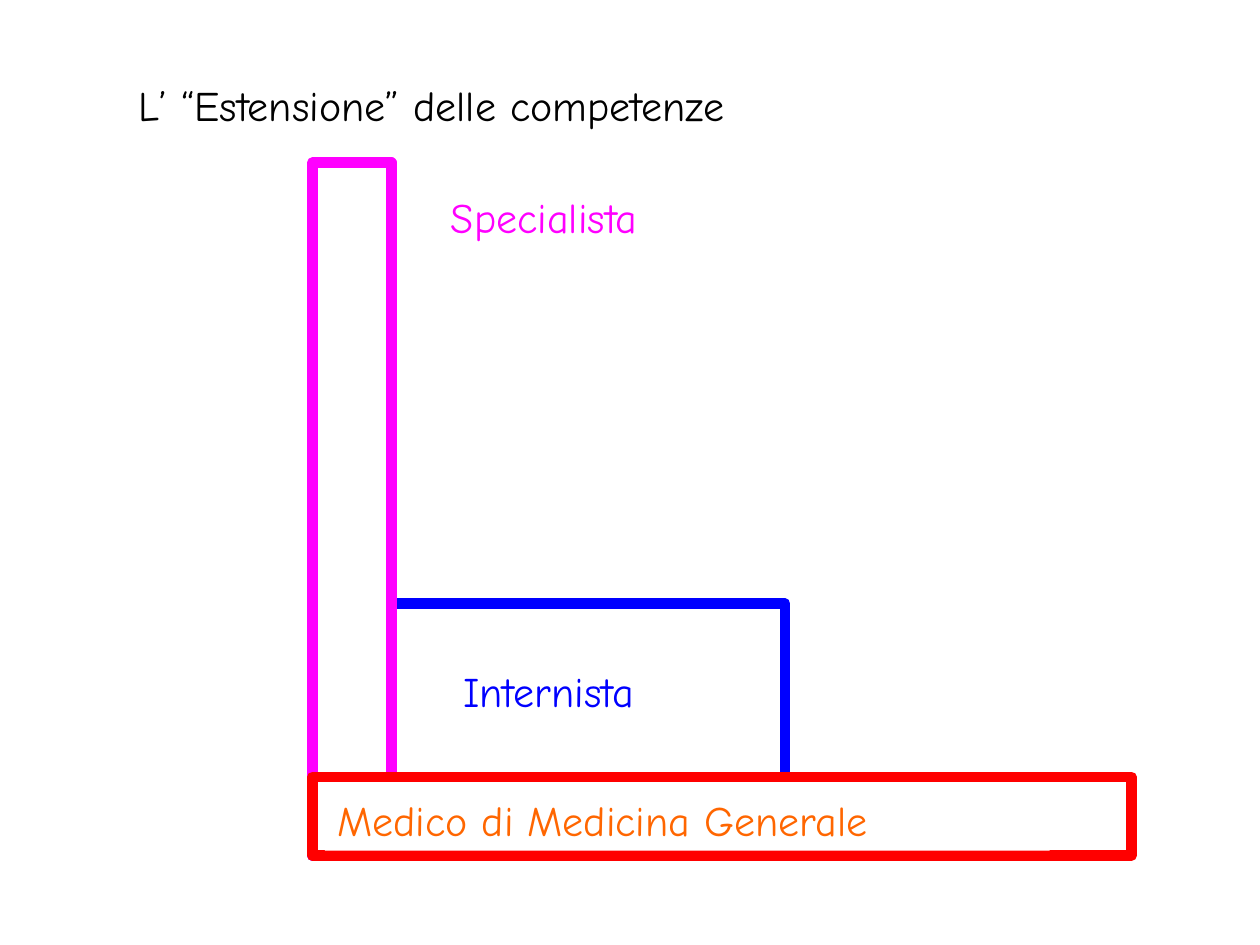
from pptx import Presentation
from pptx import util as u
from pptx.dml.color import RGBColor
from pptx.enum import shapes, text

BLACK = RGBColor(0x00, 0x00, 0x00)
WHITE = RGBColor(0xFF, 0xFF, 0xFF)
BLUE = RGBColor(0x00, 0x00, 0xFF)
MAGENTA = RGBColor(0xFF, 0x00, 0xFF)
RED = RGBColor(0xFF, 0x00, 0x00)
ORANGE = RGBColor(0xFF, 0x66, 0x00)

FONT = "Comic Neue"
ORIGIN_X = 6.3
BASELINE_Y = 17.25


def set_all(target, values):
    for name, value in values.items():
        setattr(target, name, value)


def write(holder, wording, color, anchor):
    frame = holder.text_frame
    frame.text = wording
    set_all(frame, {"word_wrap": True, "auto_size": text.MSO_AUTO_SIZE.NONE,
                    "vertical_anchor": anchor})
    paragraph = frame.paragraphs[0]
    paragraph.alignment = text.PP_ALIGN.LEFT
    font = paragraph.runs[0].font
    set_all(font, {"name": FONT, "size": u.Pt(24)})
    font.color.rgb = color


def add_title(slide, wording):
    title = slide.shapes.title
    set_all(title, {"left": u.Cm(2.54), "top": u.Cm(1.47),
                    "width": u.Cm(16.08), "height": u.Cm(1.27)})
    write(title, wording, BLACK, text.MSO_ANCHOR.TOP)


def add_panel(slide, left, top, width, height):
    panel = slide.shapes.add_shape(
        shapes.MSO_SHAPE.RECTANGLE,
        u.Cm(left), u.Cm(top), u.Cm(width), u.Cm(height))
    panel.shadow.inherit = False
    panel.fill.solid()
    panel.fill.fore_color.rgb = WHITE
    return panel


def add_scope(slide, width, height, color):
    scope = add_panel(slide, ORIGIN_X, BASELINE_Y - height, width, height)
    scope.line.color.rgb = color
    scope.line.width = u.Pt(6)


def add_label(slide, wording, color, left, top, width, height):
    label = add_panel(slide, left, top, width, height)
    label.line.fill.background()
    write(label, wording, color, text.MSO_ANCHOR.MIDDLE)


def main():
    deck = Presentation()
    set_all(deck, {"slide_width": u.Cm(25.4), "slide_height": u.Cm(19.05)})
    slide = deck.slides.add_slide(deck.slide_layouts[5])

    add_title(slide, "L’ “Estensione” delle competenze")
    add_scope(slide, 9.53, 5.08, BLUE)
    add_scope(slide, 1.59, 13.97, MAGENTA)
    add_label(slide, "Internista", BLUE, 9.09, 13.13, 5.87, 1.59)
    add_scope(slide, 16.51, 1.59, RED)
    add_label(slide, "Specialista", MAGENTA, 8.84, 3.58, 7.32, 1.59)
    add_label(slide, "Medico di Medicina Generale", ORANGE, 6.55, 15.88, 14.61, 1.27)

    deck.save("out.pptx")


if __name__ == "__main__":
    main()
